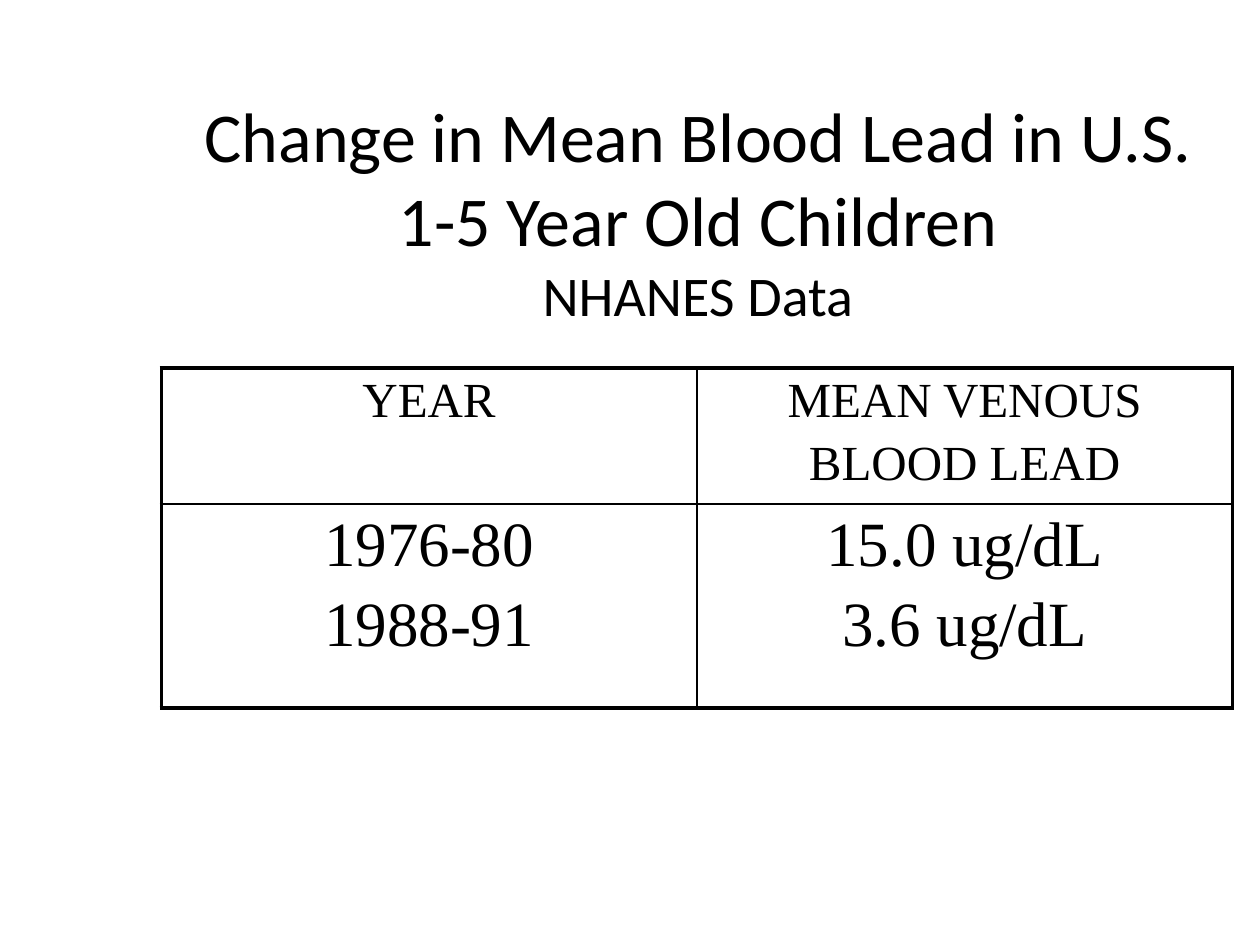
from pptx import Presentation
from pptx.dml.color import RGBColor
from pptx.enum.text import MSO_ANCHOR as Anchor, PP_ALIGN as Align
from pptx.oxml import parse_xml
from pptx.oxml.ns import nsdecls
from pptx.util import Inches, Pt

BLACK = RGBColor(0x00, 0x00, 0x00)
OUTER, INNER = Pt(2.25), Pt(1)

TITLE = "Change in Mean Blood Lead in U.S. 1-5 Year Old Children"
SUBTITLE = "NHANES Data"
LEAD_ROWS = [
    (28, [["YEAR"], ["MEAN VENOUS", "BLOOD LEAD"]]),
    (36, [["1976-80", "1988-91"], ["15.0 ug/dL", "3.6 ug/dL"]]),
]


class SlideBuilder:
    title_font = "Calibri"
    table_font = "Times New Roman"

    def __init__(self, slide):
        self.slide = slide

    def style(self, font, name, size):
        font.name, font.size = name, Pt(size)
        font.color.rgb = BLACK

    def title(self, heading, subheading, left, top, width, height):
        title = self.slide.shapes.title
        title.left, title.top = Inches(left), Inches(top)
        title.width, title.height = Inches(width), Inches(height)
        frame = title.text_frame
        frame.word_wrap = True
        frame.vertical_anchor = Anchor.MIDDLE
        line = frame.paragraphs[0]
        line.alignment = Align.CENTER
        for text, size in ((heading, 40), (subheading, 32)):
            if line.runs:
                line.add_line_break()
            run = line.add_run()
            run.text = text
            self.style(run.font, self.title_font, size)

    def border(self, cell, side, width):
        cell._tc.get_or_add_tcPr().append(parse_xml(
            f'<a:{side} {nsdecls("a")} w="{width}"><a:solidFill>'
            f'<a:srgbClr val="{BLACK}"/></a:solidFill></a:{side}>'))

    def fill_cell(self, cell, lines, size):
        cell.text = "\n".join(lines)
        for line in cell.text_frame.paragraphs:
            line.alignment = Align.CENTER
            line.space_before = Pt(round(size * 0.16, 1))
            self.style(line.font, self.table_font, size)

    def table(self, rows, left, top, width, heights):
        last_row, last_col = len(rows) - 1, len(rows[0][1]) - 1
        table = self.slide.shapes.add_table(
            last_row + 1, last_col + 1, Inches(left), Inches(top),
            Inches(width), Inches(sum(heights))).table
        table.first_row = table.horz_banding = False
        for r, (size, cells) in enumerate(rows):
            table.rows[r].height = Inches(heights[r])
            for c, lines in enumerate(cells):
                cell = table.cell(r, c)
                self.fill_cell(cell, lines, size)
                # Heavy frame around the table, thin rules inside
                edges = {"lnL": c == 0, "lnR": c == last_col,
                         "lnT": r == 0, "lnB": r == last_row}
                for side, is_outer in edges.items():
                    self.border(cell, side, OUTER if is_outer else INNER)
                cell.fill.background()


def main():
    deck = Presentation()
    deck.slide_width, deck.slide_height = Inches(10), Inches(7.5)
    title_only = deck.slide_layouts[5]
    builder = SlideBuilder(deck.slides.add_slide(title_only))

    # Heading
    builder.title(TITLE, SUBTITLE, 1.33, 0.67, 8.42, 2)

    # Blood lead by survey period
    builder.table(LEAD_ROWS, 1.28, 2.92, 8.5, [1.08, 1.62])

    deck.save("out.pptx")


if __name__ == "__main__":
    main()
